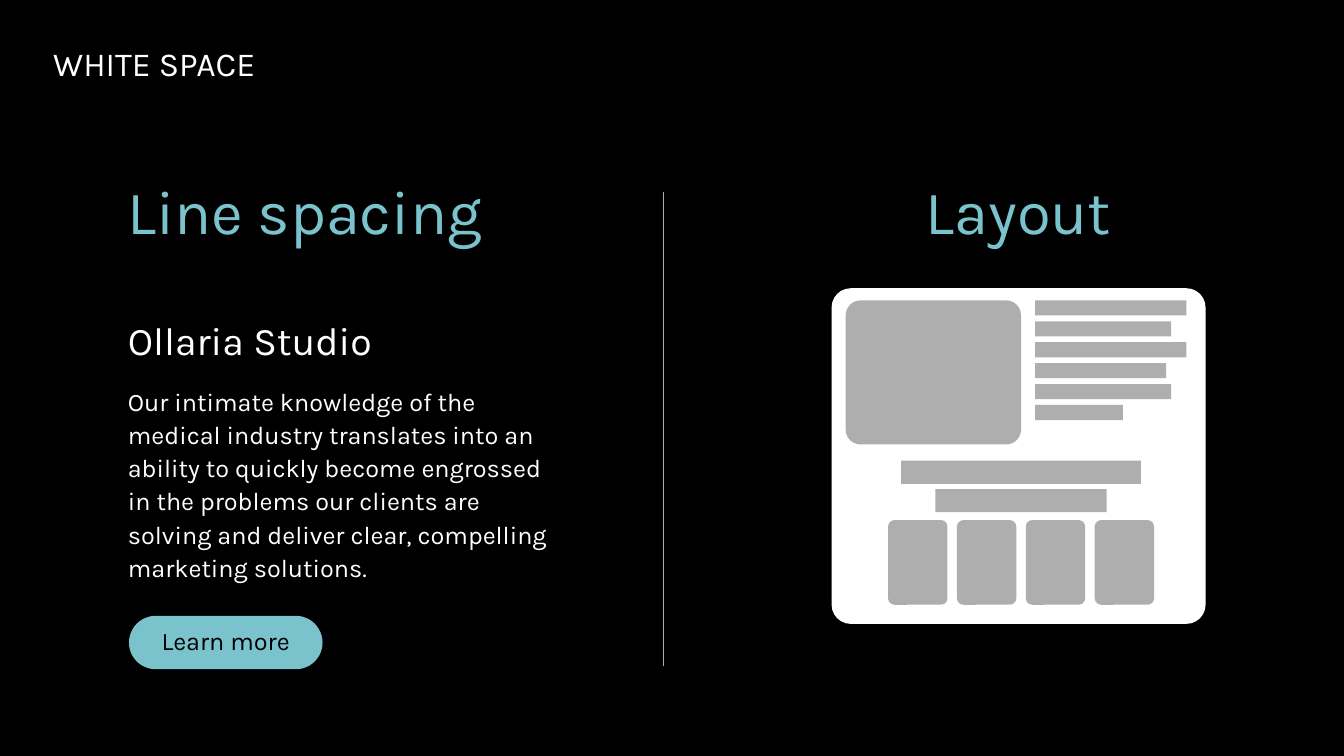
from pptx import Presentation
from pptx.dml.color import RGBColor
from pptx.enum.shapes import MSO_CONNECTOR, MSO_SHAPE
from pptx.enum.text import MSO_ANCHOR, MSO_AUTO_SIZE, PP_ALIGN
from pptx.oxml.ns import qn
from pptx.util import Inches, Pt
from lxml import etree

RECTANGLE = MSO_SHAPE.RECTANGLE
ROUNDED = MSO_SHAPE.ROUNDED_RECTANGLE
LEFT, CENTER = PP_ALIGN.LEFT, PP_ALIGN.CENTER
FIT_SHAPE = MSO_AUTO_SIZE.SHAPE_TO_FIT_TEXT
MIDDLE = MSO_ANCHOR.MIDDLE
STRAIGHT = MSO_CONNECTOR.STRAIGHT

FONT = "Karla"
COLORS = {"black": "000000", "white": "FFFFFF", "teal": "7AC3CC", "gray": "AEAEAE"}
COLORS = {name: RGBColor.from_string(value) for name, value in COLORS.items()}

presentation = Presentation()
presentation.slide_width = Inches(13.33)
presentation.slide_height = Inches(7.5)
slide = presentation.slides.add_slide(presentation.slide_layouts[6])
slide.background.fill.solid()
slide.background.fill.fore_color.rgb = COLORS["black"]

# Grid of 40 columns and 30 rows
COLUMN = presentation.slide_width / 40
ROW = presentation.slide_height / 30


def add_block(kind, left, top, width, height, color, rounding=None):
    shape = slide.shapes.add_shape(kind, round(left * COLUMN), round(top * ROW),
                                   round(width * COLUMN), round(height * ROW))
    shape.shadow.inherit = False
    shape.fill.solid()
    shape.fill.fore_color.rgb = COLORS[color]
    shape.line.fill.background()
    if rounding is not None:
        shape.adjustments[0] = rounding
    return shape


def write(frame, text, size, color, alignment=LEFT, spacing=1.0):
    paragraph = frame.paragraphs[0]
    paragraph.alignment = alignment
    paragraph.line_spacing = spacing
    run = paragraph.add_run()
    run.text = text
    run.font.name = FONT
    run.font.size = Pt(size)
    run.font.color.rgb = COLORS[color]


# Title, column headings and sample text
BODY = ("Our intimate knowledge of the medical industry translates into an ability "
        "to quickly become engrossed in the problems our clients are solving and "
        "deliver clear, compelling marketing solutions.")
texts = [
    # text, left, top, width, height, size, color, alignment, spacing, wrap, left inset
    ("WHITE SPACE", 1.29, 1.52, 7.53, 2, 24, "white", LEFT, 1.0, False, 0.1),
    ("Line spacing", 3.42, 6.68, 11.61, 3.36, 44, "teal", CENTER, 1.0, True, 0),
    ("Layout", 24.51, 6.68, 11.61, 3.36, 44, "teal", CENTER, 1.0, True, 0.1),
    ("Ollaria Studio", 3.51, 12.56, 13.53, 2.12, 28, "white", LEFT, 0.9, True, 0.1),
    (BODY, 3.51, 15, 13.53, 8.32, 18, "white", LEFT, 1.1, True, 0.1),
]
for text, left, top, width, height, size, color, alignment, spacing, wrap, inset in texts:
    box = slide.shapes.add_textbox(round(left * COLUMN), round(top * ROW),
                                   round(width * COLUMN), round(height * ROW))
    frame = box.text_frame
    frame.word_wrap = wrap
    frame.auto_size = FIT_SHAPE
    frame.margin_left = Inches(inset)
    write(frame, text, size, color, alignment, spacing)

# Button
button = add_block(ROUNDED, 3.84, 24.44, 5.76, 2.12, "teal", 0.5)
button.text_frame.vertical_anchor = MIDDLE
write(button.text_frame, "Learn more", 18, "black", CENTER, 0.9)

# Divider between the two halves
divider_x = round(19.74 * COLUMN)
divider = slide.shapes.add_connector(STRAIGHT, divider_x, round(7.6 * ROW),
                                     divider_x, round(26.44 * ROW))
divider.line.color.rgb = COLORS["gray"]
divider.line.width = Pt(1)
etree.SubElement(divider._element.spPr, qn("a:effectLst"))

# Layout mock-up: page and main image
add_block(ROUNDED, 24.75, 11.44, 11.13, 13.32, "white", 0.057)
add_block(ROUNDED, 25.17, 11.92, 5.22, 5.72, "gray", 0.103)

# Lines of text beside the image
for index, width in enumerate([4.5, 4.05, 4.5, 3.9, 4.05, 2.61]):
    add_block(RECTANGLE, 30.81, 11.92 + index * 0.83, width, 0.6, "gray")

# Two centred headline bars
HEADLINE_CENTER = 30.39
for index, width in enumerate([7.14, 5.1]):
    add_block(RECTANGLE, HEADLINE_CENTER - width / 2, 18.28 + index * 1.13,
              width, 0.92, "gray")

# Row of four cards
for index in range(4):
    add_block(ROUNDED, 26.43 + index * 2.05, 20.64, 1.77, 3.36, "gray", 0.109)

presentation.save("out.pptx")
